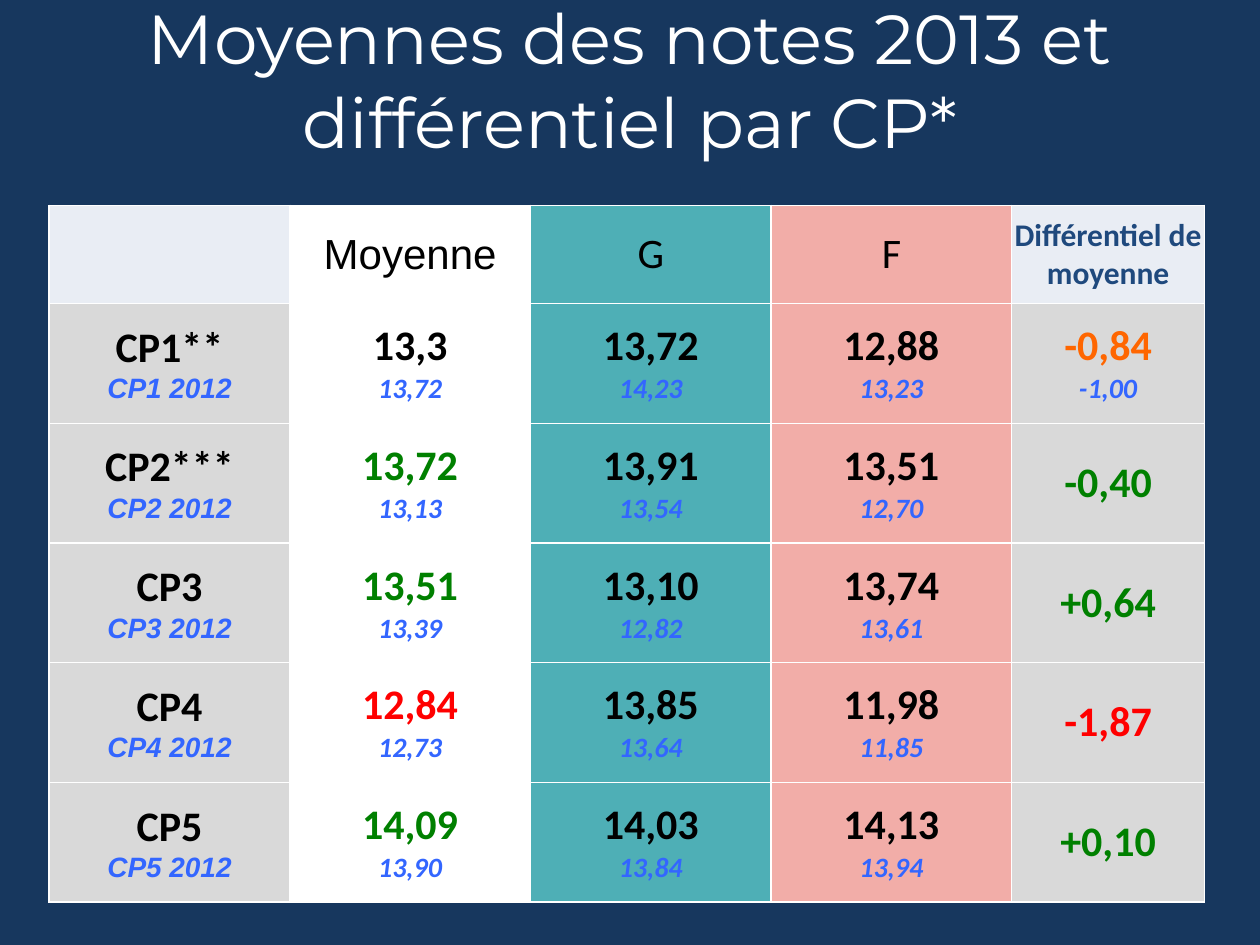
"""Build the slide of 2013 mark averages and differentials by CP."""
from typing import NamedTuple, Optional

from lxml.etree import SubElement
from pptx import Presentation
from pptx.dml.color import RGBColor
from pptx.enum.text import MSO_ANCHOR, MSO_AUTO_SIZE, PP_ALIGN
from pptx.oxml.ns import qn
from pptx.util import Inches, Pt

COLORS = {
    "navy": "17375E", "white": "FFFFFF", "black": "000000", "heading": "1F497D",
    "pale": "E9EDF4", "grey": "D9D9D9", "teal": "4EAFB6", "pink": "F2ADA8",
    "blue": "3366FF", "green": "008000", "red": "FF0000", "orange": "FF6600",
}
COLUMN_WIDTHS = [1.91, 1.91, 1.91, 1.91, 1.53]
HEADER_HEIGHT, ROW_HEIGHT = 0.78, 0.95
HEADER_FILLS = ["pale", "white", "teal", "pink", "pale"]
BODY_FILLS = ["grey", "white", "teal", "pink", "grey"]


class Line(NamedTuple):
    text: str
    size: float = 24
    color: str = "black"
    font: str = "Calibri"
    bold: bool = True
    italic: bool = False


class Score(NamedTuple):
    current: str
    previous: Optional[str] = None
    color: str = "black"
    previous_font: str = "Calibri"


class Level(NamedTuple):
    label: str
    average: Score
    boys: Score
    girls: Score
    gap: Score


LEVELS = [
    Level("CP1**", Score("13,3", "13,72"), Score("13,72", "14,23"),
          Score("12,88", "13,23"), Score("-0,84", "-1,00", "orange")),
    Level("CP2***", Score("13,72", "13,13", "green"), Score("13,91", "13,54"),
          Score("13,51", "12,70"), Score("-0,40", color="green")),
    Level("CP3", Score("13,51", "13,39", "green"), Score("13,10", "12,82"),
          Score("13,74", "13,61"), Score("+0,64", color="green")),
    Level("CP4", Score("12,84", "12,73", "red"), Score("13,85", "13,64"),
          Score("11,98", "11,85"), Score("-1,87", color="red")),
    Level("CP5", Score("14,09", "13,90", "green"), Score("14,03", "13,84"),
          Score("14,13", "13,94"), Score("+0,10", color="green")),
]
HEADINGS = [
    [],
    [Line("Moyenne", font="Arial", bold=False)],
    [Line("G", bold=False)],
    [Line("F", bold=False)],
    [Line("Différentiel de moyenne", size=18, color="heading")],
]


def rgb(name: str) -> RGBColor:
    """Return the named colour."""
    return RGBColor.from_string(COLORS[name])


def write_lines(frame, lines: list[Line]) -> None:
    """Write each line as a centred paragraph."""
    for index, line in enumerate(lines):
        paragraph = frame.add_paragraph() if index else frame.paragraphs[0]
        paragraph.alignment = PP_ALIGN.CENTER
        run = paragraph.add_run()
        run.text = line.text
        formats = {"size": Pt(line.size), "name": line.font,
                   "bold": line.bold, "italic": line.italic}
        for attribute, value in formats.items():
            setattr(run.font, attribute, value)
        run.font.color.rgb = rgb(line.color)


def score_lines(score: Score) -> list[Line]:
    """Return the 2013 line and, where there is one, the 2012 line."""
    lines = [Line(score.current, color=score.color)]
    if score.previous:
        lines.append(Line(score.previous, 16, "blue", score.previous_font, italic=True))
    return lines


def level_cells(level: Level) -> list[list[Line]]:
    """Return the lines of every cell in a level's row."""
    label = Score(level.label, f"{level.label.rstrip('*')} 2012", previous_font="Arial")
    return [score_lines(score) for score in (label, *level[1:])]


def draw_cell(cell, lines: list[Line], fill: str) -> None:
    """Format one cell and write its lines."""
    margins = ("margin_left", "margin_top", "margin_right", "margin_bottom")
    formats = {"vertical_anchor": MSO_ANCHOR.MIDDLE, **dict.fromkeys(margins, 0)}
    for attribute, value in formats.items():
        setattr(cell, attribute, value)
    properties = cell._tc.get_or_add_tcPr()
    for side in ("a:lnL", "a:lnR", "a:lnT", "a:lnB"):
        border = SubElement(properties, qn(side), w=str(Pt(1)))
        solid = SubElement(border, qn("a:solidFill"))
        SubElement(solid, qn("a:srgbClr"), val=COLORS["white"])
    cell.fill.solid()
    cell.fill.fore_color.rgb = rgb(fill)
    write_lines(cell.text_frame, lines)


def draw_title(title) -> None:
    """Place and write the slide title."""
    formats = {"left": 0, "top": 0, "width": Inches(10), "height": Inches(1.25)}
    for attribute, value in formats.items():
        setattr(title, attribute, value)
    frame = title.text_frame
    frame.word_wrap = True
    frame.auto_size = MSO_AUTO_SIZE.NONE
    frame.vertical_anchor = MSO_ANCHOR.MIDDLE
    write_lines(frame, [Line("Moyennes des notes 2013 et différentiel par CP*",
                             39.6, "white", "Montserrat", bold=False)])


def draw_scores(slide) -> None:
    """Draw the table of averages."""
    rows = [HEADINGS, *map(level_cells, LEVELS)]
    heights = [HEADER_HEIGHT] + [ROW_HEIGHT] * len(LEVELS)
    scores = slide.shapes.add_table(
        len(rows), len(COLUMN_WIDTHS), Inches(0.39), Inches(1.63),
        Inches(sum(COLUMN_WIDTHS)), Inches(sum(heights))).table
    scores.first_row = scores.horz_banding = False
    for column, width in zip(scores.columns, COLUMN_WIDTHS):
        column.width = Inches(width)
    for index, (row, height, cells) in enumerate(zip(scores.rows, heights, rows)):
        row.height = Inches(height)
        fills = BODY_FILLS if index else HEADER_FILLS
        for cell, lines, fill in zip(row.cells, cells, fills):
            draw_cell(cell, lines, fill)


def main() -> None:
    """Build and save the presentation."""
    presentation = Presentation()
    presentation.slide_width, presentation.slide_height = Inches(10), Inches(7.5)
    slide = presentation.slides.add_slide(presentation.slide_layouts.get_by_name("Title Only"))
    slide.background.fill.solid()
    slide.background.fill.fore_color.rgb = rgb("navy")
    draw_title(slide.shapes.title)
    draw_scores(slide)
    presentation.save("out.pptx")


if __name__ == "__main__":
    main()
